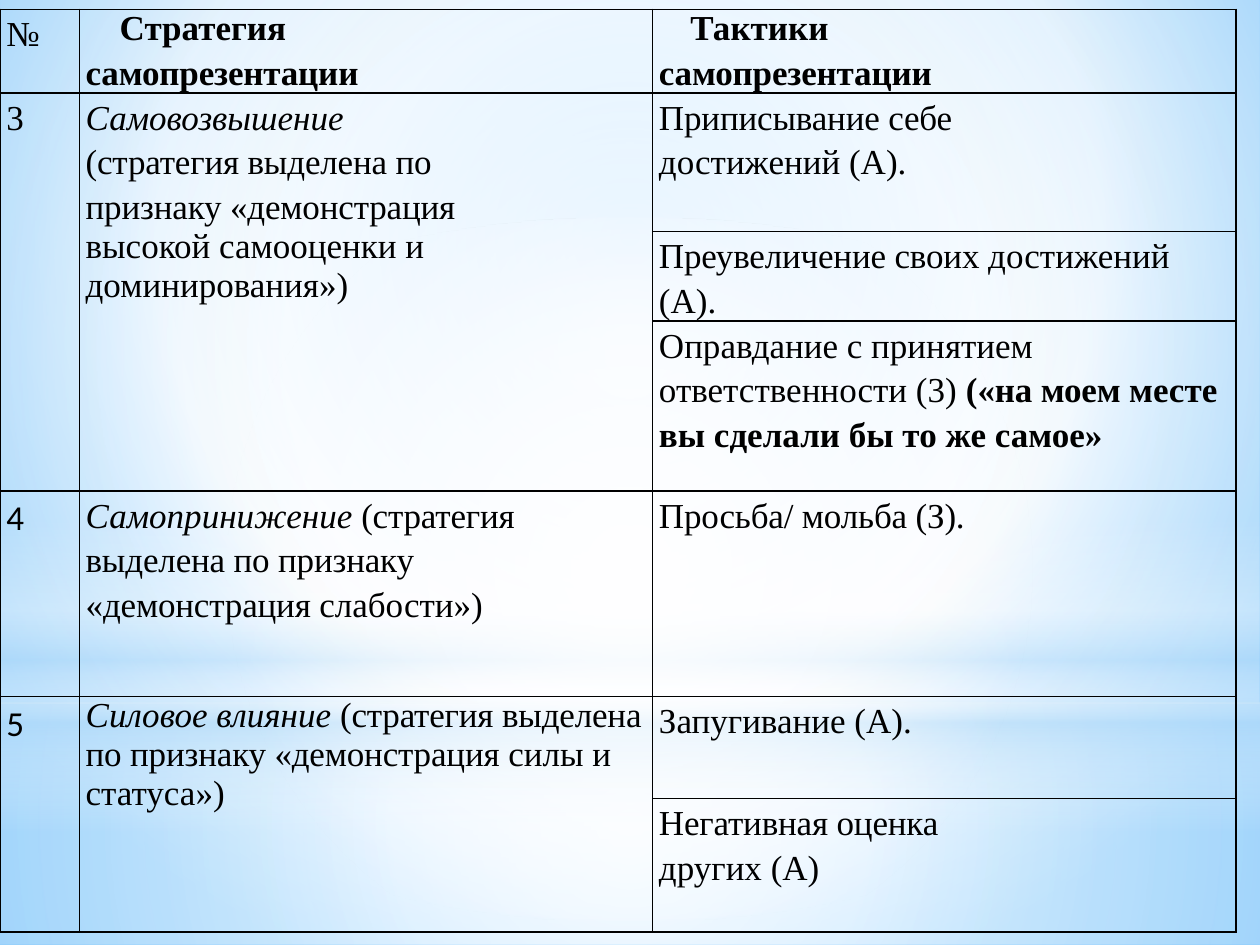
from lxml import etree
from pptx import Presentation
from pptx import util as u
from pptx.dml.color import RGBColor
from pptx.enum import shapes, text
from pptx.oxml import ns

COLORS = {"ink": "000000", "white": "FFFFFF", "haze": "B4DCFA",
          "sky": "9ED5FF", "blue": "5BB9FF"}
CENTRE = (50, 50, 50, 50)
LOOSE = {"line_spacing": 1.15}
PLAIN = {}
EVEN = {**LOOSE, "alignment": text.PP_ALIGN.JUSTIFY}
SPACED = {**LOOSE, "space_after": u.Pt(10)}
COLUMNS = (0.63, 4.55, 4.63)
ROWS = (0.66, 1.1, 0.71, 1.35, 1.63, 0.81, 1.06)

# Each paragraph is (format, left indent, runs); a run is (text, marks): b bold, i italic, t tight, c Calibri.
CELLS = {
    (0, 0): [(EVEN, 0, [("№", "")])],
    (0, 1): [(PLAIN, 0.27, [("Стратегия", "b")]),
             (EVEN, 0, [("самопрезентации", "bt")])],
    (0, 2): [(PLAIN, 0.25, [("Тактики", "b")]),
             (EVEN, 0, [("самопрезентации", "bt")])],
    (1, 0): [(EVEN, 0, [("3", "")])],
    (1, 1): [(LOOSE, 0, [("Самовозвышение", "i")]),
             (LOOSE, 0, [("(стратегия выделена по", "t")]),
             (LOOSE, 0, [("признаку «демонстрация", "t")]),
             (PLAIN, 0, [("высокой самооценки и доминирования»)", "")])],
    (1, 2): [(LOOSE, 0, [("Приписывание себе", "t")]),
             (LOOSE, 0, [("достижений (А).", "")])],
    (2, 2): [(SPACED, 0, [("Преувеличение своих", "t"), (" достижений (А).", "")])],
    (3, 2): [(LOOSE, 0, [("Оправдание с принятием ответственности (3) ", ""),
                         ("(", "b"), ("«на моем ", "bt"),
                         ("месте вы сделали бы то же самое»", "b")])],
    (4, 0): [(EVEN, 0, [("4", "c")])],
    (4, 1): [(SPACED, 0, [("Самопринижение ", "i"),
                          ("(стратегия выделена по признаку «демонстрация ", "t"),
                          ("слабости»)", "")])],
    (4, 2): [(LOOSE, 0, [("Просьба/ мольба (З).", "t")])],
    (5, 0): [(EVEN, 0, [("5", "c")])],
    (5, 1): [(PLAIN, 0, [("Силовое влияние ", "i"),
                         ("(стратегия выделена по признаку «демонстрация", "t"),
                         (" силы и статуса»)", "")])],
    (5, 2): [(LOOSE, 0, [("Запугивание (А).", "")])],
    (6, 2): [(LOOSE, 0, [("Негативная оценка", "t")]),
             (LOOSE, 0, [("других (А)", "")])],
}
MERGES = [(1, 3), (5, 6)]


def add(parent, tag, **values):
    """Append a drawing element with the given attributes."""
    child = etree.SubElement(parent, ns.qn(f"a:{tag}"))
    for name, value in values.items():
        child.set(name, str(value))
    return child


class Page:
    """Hold the deck's style and its current slide."""

    def __init__(self, deck):
        """Add a blank slide."""
        self.width, self.height = deck.slide_width, deck.slide_height
        self.slide = deck.slides.add_slide(deck.slide_layouts[6])

    def gradient(self, holder, stops, focus=None):
        """Swap a solid fill for a circular gradient, or a vertical one without focus."""
        solid = holder.find(ns.qn("a:solidFill"))
        fill = etree.Element(ns.qn("a:gradFill"), rotWithShape="1")
        holder.replace(solid, fill)
        listing = add(fill, "gsLst")
        for place, color, opacity in stops:
            stop = add(listing, "gs", pos=place * 1000)
            tone = add(stop, "srgbClr", val=COLORS[color])
            if opacity < 100:
                add(tone, "alpha", val=opacity * 1000)
        if focus:
            way = add(fill, "path", path="circle")
            add(way, "fillToRect", **{side: share * 1000 for side, share in zip("ltrb", focus)})
        else:
            add(fill, "lin", ang=5400000, scaled=0)

    def background(self, stops, focus):
        """Fill the slide background."""
        self.slide.background.fill.solid()
        self.gradient(self.slide.element.find(".//" + ns.qn("p:bgPr")), stops, focus)

    def glow(self, kind, top, height, stops, focus=None):
        """Draw a full-width soft shape; top and height are shares of the slide."""
        shape = self.slide.shapes.add_shape(
            kind, 0, int(self.height * top), self.width, int(self.height * height))
        shape.shadow.inherit = False
        shape.fill.solid()
        shape.line.fill.background()
        self.gradient(shape.element.spPr, stops, focus)

    def add_spans(self, para, runs):
        """Add the styled runs to a paragraph."""
        for words, marks in runs:
            span = para.add_run()
            span.text = words
            formats = {"name": "Calibri" if "c" in marks else "Times New Roman",
                       "size": u.Pt(20), "bold": "b" in marks, "italic": "i" in marks}
            for name, value in formats.items():
                setattr(span.font, name, value)
            span.font.color.rgb = RGBColor.from_string(COLORS["ink"])
            if "t" in marks:
                span.font._element.set("spc", "-10")

    def frame(self, cell):
        """Clear the cell fill, set its margins and draw its borders."""
        formats = {"margin_left": u.Inches(0.05), "margin_right": u.Inches(0.05),
                   "margin_top": 0, "margin_bottom": 0}
        for name, value in formats.items():
            setattr(cell, name, value)
        props = cell._tc.get_or_add_tcPr()
        for side in "LRTB":
            line = add(props, f"ln{side}", w=u.Pt(1))
            add(add(line, "solidFill"), "srgbClr", val=COLORS["ink"])
        cell.fill.background()

    def table(self, top, columns, rows, cells, merges):
        """Build the bordered table with merged row groups."""
        grid = self.slide.shapes.add_table(
            len(rows), len(columns), 0, int(self.height * top),
            u.Inches(sum(columns)), u.Inches(sum(rows))).table
        grid.first_row = grid.horz_banding = False
        for column, width in zip(grid.columns, columns):
            column.width = u.Inches(width)
        for row, height in zip(grid.rows, rows):
            row.height = u.Inches(height)
        for cell in grid.iter_cells():
            self.frame(cell)
        for first, last in merges:
            for column in (0, 1):
                grid.cell(first, column).merge(grid.cell(last, column))
        for place, paragraphs in cells.items():
            body = grid.cell(*place).text_frame
            for index, (formats, indent, runs) in enumerate(paragraphs):
                para = body.add_paragraph() if index else body.paragraphs[0]
                for name, value in formats.items():
                    setattr(para, name, value)
                if indent:
                    para._p.get_or_add_pPr().set("marL", str(u.Inches(indent)))
                self.add_spans(para, runs)


def main():
    """Build and save the deck."""
    deck = Presentation()
    deck.slide_width, deck.slide_height = u.Inches(10), u.Inches(7.5)
    page = Page(deck)
    box, oval = shapes.MSO_SHAPE.RECTANGLE, shapes.MSO_SHAPE.OVAL
    page.background([(0, "sky", 100), (60, "white", 100), (100, "blue", 100)], (20, 10, 20, 60))
    page.glow(box, 0.744, 0.256, [(0, "white", 91), (37, "white", 76), (100, "haze", 79)], CENTRE)
    page.glow(box, 0, 0.744, [(0, "white", 89), (48, "white", 62), (100, "haze", 79)], CENTRE)
    page.glow(box, 0.55, 0.33, [(0, "white", 0), (29, "white", 30), (45, "haze", 40),
                                (55, "white", 26), (65, "haze", 60), (100, "white", 0)])
    page.glow(oval, 0.23, 0.744, [(0, "white", 100), (56, "white", 0)], CENTRE)
    page.table(0.01, COLUMNS, ROWS, CELLS, MERGES)
    deck.save("out.pptx")


if __name__ == "__main__":
    main()
